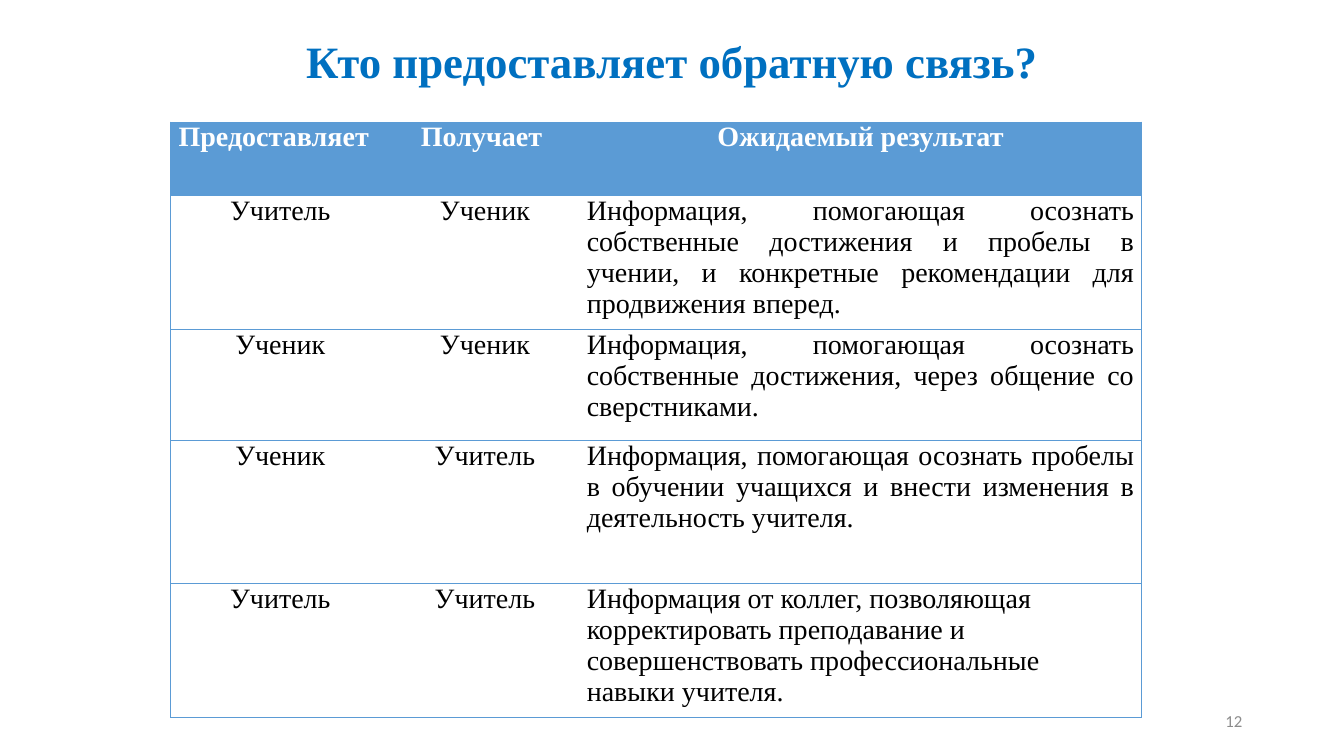
from lxml.etree import SubElement
from pptx import Presentation
from pptx.dml.color import RGBColor
from pptx.enum.text import MSO_ANCHOR, PP_ALIGN
from pptx.oxml.ns import qn
from pptx.util import Inches, Pt

BLUE = "5B9BD5"
SERIF = "Times New Roman"


def add_text(paragraph, text, size, color, font=SERIF, bold=False):
    run = paragraph.add_run()
    run.text = text
    run.font.name = font
    run.font.size = Pt(size)
    run.font.bold = bold
    run.font.color.rgb = RGBColor.from_string(color)


def add_border(cell, side, visible):
    line = SubElement(cell._tc.get_or_add_tcPr(), qn(f"a:ln{side}"), w=str(Pt(0.5)))
    if visible:
        fill = SubElement(line, qn("a:solidFill"))
        SubElement(fill, qn("a:srgbClr"), val=BLUE)
    else:
        SubElement(line, qn("a:noFill"))


presentation = Presentation()
presentation.slide_width = Inches(13.33)
presentation.slide_height = Inches(7.5)
slide = presentation.slides.add_slide(presentation.slide_layouts[5])

title = slide.shapes.title
title.left, title.top = Inches(1.28), Inches(0.18)
title.width, title.height = Inches(10.77), Inches(0.91)
title.text_frame.vertical_anchor = MSO_ANCHOR.MIDDLE
paragraph = title.text_frame.paragraphs[0]
paragraph.alignment = PP_ALIGN.CENTER
paragraph.line_spacing = 0.9
add_text(paragraph, "Кто предоставляет обратную связь?", 32, "0070C0", bold=True)

rows = [
    ("Предоставляет", "Получает ", "Ожидаемый результат"),
    ("Учитель", "Ученик", "Информация, помогающая осознать собственные достижения и пробелы в учении, и конкретные рекомендации для продвижения вперед."),
    ("Ученик", "Ученик", "Информация, помогающая осознать собственные достижения, через общение со сверстниками."),
    ("Ученик", "Учитель", "Информация, помогающая осознать пробелы в обучении учащихся и внести изменения в деятельность учителя."),
    ("Учитель", "Учитель", "Информация от коллег, позволяющая корректировать преподавание и совершенствовать профессиональные навыки учителя."),
]
column_widths = [2.18, 1.88, 5.57]
row_heights = [0.73, 1.33, 1.1, 1.42, 1.33]
last_row, last_column = len(rows) - 1, len(column_widths) - 1

table = slide.shapes.add_table(
    len(rows), len(column_widths), Inches(1.69), Inches(1.21),
    Inches(sum(column_widths)), Inches(sum(row_heights)),
).table
table.horz_banding = False
for column, width in zip(table.columns, column_widths):
    column.width = Inches(width)
for row, height in zip(table.rows, row_heights):
    row.height = Inches(height)

for row_index, texts in enumerate(rows):
    header = row_index == 0
    for column_index, text in enumerate(texts):
        cell = table.cell(row_index, column_index)
        cell.margin_left = cell.margin_right = Inches(0.07)
        cell.margin_top = cell.margin_bottom = 0
        add_border(cell, "L", column_index == 0)
        add_border(cell, "R", column_index == last_column)
        add_border(cell, "T", True)
        add_border(cell, "B", True)
        if header:
            cell.fill.solid()
            cell.fill.fore_color.rgb = RGBColor.from_string(BLUE)
        else:
            cell.fill.background()
        paragraph = cell.text_frame.paragraphs[0]
        if header or column_index < last_column:
            paragraph.alignment = PP_ALIGN.CENTER
        elif row_index < last_row:
            paragraph.alignment = PP_ALIGN.JUSTIFY
        else:
            paragraph.alignment = PP_ALIGN.LEFT
        add_text(paragraph, text, 20, "FFFFFF" if header else "000000", bold=header)
table.cell(0, 0).margin_right = Inches(0.2)

page_number = slide.shapes.add_textbox(Inches(9.42), Inches(6.95), Inches(3), Inches(0.4))
page_number.text_frame.word_wrap = True
page_number.text_frame.vertical_anchor = MSO_ANCHOR.MIDDLE
paragraph = page_number.text_frame.paragraphs[0]
paragraph.alignment = PP_ALIGN.RIGHT
add_text(paragraph, "12", 12, "8C8C8C", font="Calibri")

presentation.save("out.pptx")
